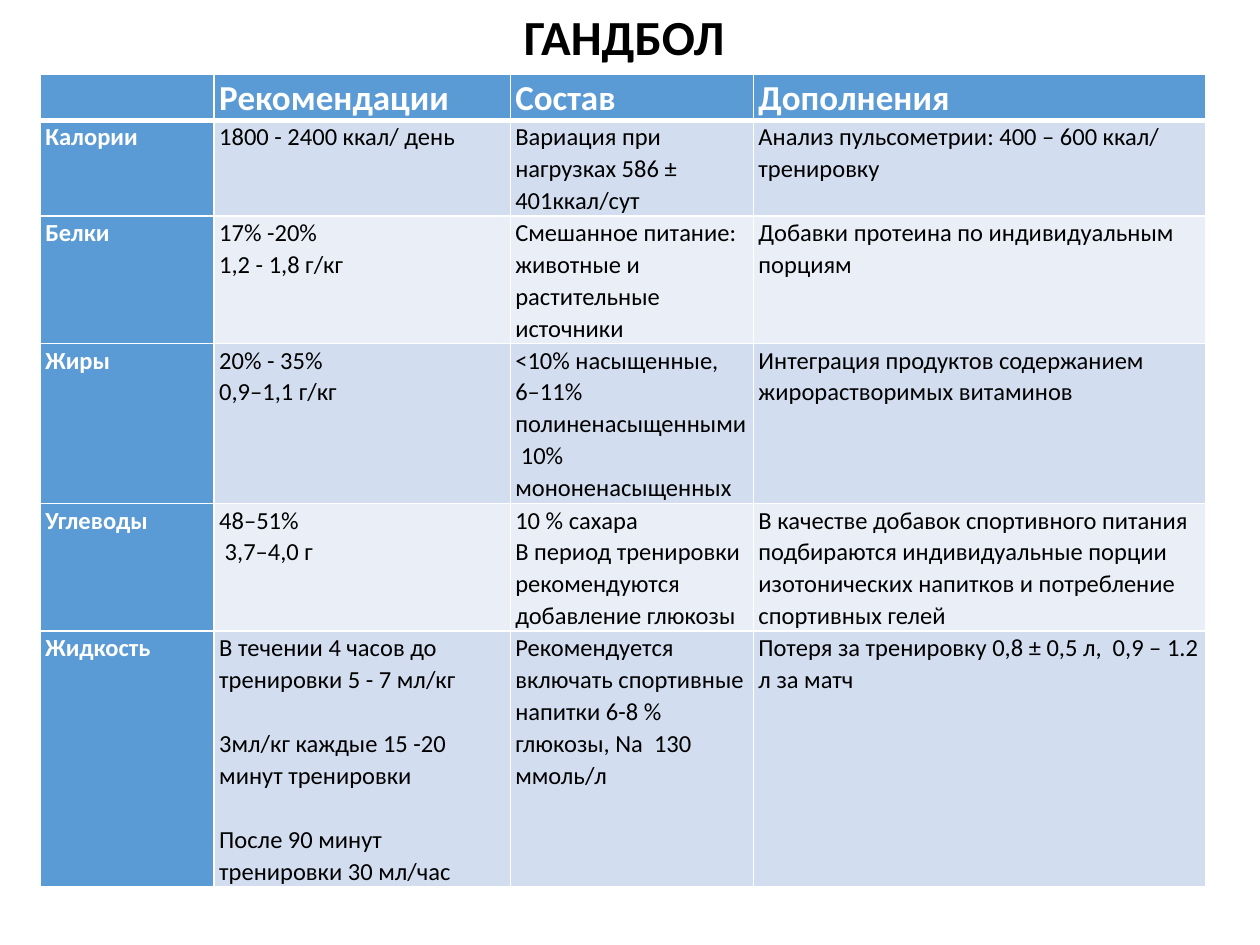
from dataclasses import dataclass

from lxml import etree
from pptx import Presentation
from pptx import util as u
from pptx.dml.color import RGBColor
from pptx.enum import text
from pptx.oxml import ns

COLORS = {"head": "5B9BD5", "odd": "D2DEEF", "even": "EAEFF7",
          "white": "FFFFFF", "black": "000000"}
FONT = "Calibri"
LINE_SPACING = 1.07
PARAGRAPH_GAP = 18.3  # one line of body text, in points
COLUMN_WIDTHS = (1.38, 2.35, 1.93, 3.59)


@dataclass(frozen=True)
class Row:
    """One table row: each cell is a list of paragraphs; gap spaces out the second cell."""
    height: float
    cells: tuple[list[str], ...]
    gap: float = 0


ROWS = (
    Row(0.36, ([], ["Рекомендации"], ["Состав"], ["Дополнения"])),
    Row(0.76, (["Калории"],
               ["1800 - 2400 ккал/ день"],
               ["Вариация при нагрузках 586 ± 401ккал/сут"],
               ["Анализ пульсометрии: 400 – 600 ккал/ тренировку"])),
    Row(1.01, (["Белки"],
               ["17% -20%", "1,2 - 1,8 г/кг"],
               ["Смешанное питание: животные и растительные источники"],
               ["Добавки протеина по индивидуальным порциям"])),
    Row(1.27, (["Жиры"],
               ["20% - 35%", "0,9–1,1 г/кг"],
               ["<10% насыщенные, 6–11% полиненасыщенными", " 10% мононенасыщенных"],
               ["Интеграция продуктов содержанием жирорастворимых витаминов"])),
    Row(1.01, (["Углеводы"],
               ["48–51%", " 3,7–4,0 г"],
               ["10 % сахара", "В период тренировки рекомендуются добавление глюкозы"],
               ["В качестве добавок спортивного питания подбираются индивидуальные "
                "порции изотонических напитков и потребление спортивных гелей"])),
    Row(2.02, (["Жидкость"],
               ["В течении 4 часов до тренировки 5 - 7 мл/кг",
                "3мл/кг каждые 15 -20 минут тренировки",
                "После 90 минут тренировки 30 мл/час"],
               ["Рекомендуется включать спортивные напитки 6-8 % глюкозы, Na  130 ммоль/л"],
               ["Потеря за тренировку 0,8 ± 0,5 л,  0,9 – 1.2 л за матч"]),
        gap=PARAGRAPH_GAP),
)


def add_run(p, words: str, size: float, color: str, bold: bool) -> None:
    r = p.add_run()
    r.text = words
    for name, value in {"name": FONT, "size": u.Pt(size), "bold": bold}.items():
        setattr(r.font, name, value)
    r.font.color.rgb = RGBColor.from_string(COLORS[color])


def set_borders(cell, widths: dict[str, float]) -> None:
    tc_pr = cell._tc.get_or_add_tcPr()
    for side, width in widths.items():
        ln = etree.SubElement(tc_pr, ns.qn(f"a:ln{side}"), w=str(u.Pt(width)))
        fill = etree.SubElement(ln, ns.qn("a:solidFill"))
        etree.SubElement(fill, ns.qn("a:srgbClr"), val=COLORS["white"])


def fill_cell(cell, paragraphs: list[str], i: int, j: int, gap: float) -> None:
    is_head = i == 0 or j == 0
    margins = {"margin_left": 0.04, "margin_right": 0.04, "margin_top": 0, "margin_bottom": 0}
    for name, value in margins.items():
        setattr(cell, name, u.Inches(value))
    set_borders(cell, {"L": 1, "R": 1, "T": 3 if i == 1 else 1, "B": 3 if i == 0 else 1})
    cell.fill.solid()
    shade = "head" if is_head else "odd" if i % 2 else "even"
    cell.fill.fore_color.rgb = RGBColor.from_string(COLORS[shade])

    tf = cell.text_frame
    for n, words in enumerate(paragraphs):
        p = tf.add_paragraph() if n else tf.paragraphs[0]
        p.line_spacing = LINE_SPACING
        if n and gap:
            p.space_before = u.Pt(gap)
        add_run(p, words, 20 if i == 0 else 14, "white" if is_head else "black", is_head)


def add_nutrition_table(s) -> None:
    width, height = sum(COLUMN_WIDTHS), sum(row.height for row in ROWS)
    table = s.shapes.add_table(len(ROWS), len(COLUMN_WIDTHS), u.Inches(0.32), u.Inches(0.59),
                               u.Inches(width), u.Inches(height)).table
    table.horz_banding = False
    for column, w in zip(table.columns, COLUMN_WIDTHS):
        column.width = u.Inches(w)
    for i, row in enumerate(ROWS):
        table.rows[i].height = u.Inches(row.height)
        for j, paragraphs in enumerate(row.cells):
            fill_cell(table.cell(i, j), paragraphs, i, j, row.gap if j == 1 else 0)


def add_title(s, words: str) -> None:
    sp = s.shapes.add_textbox(u.Inches(4.06), 0, u.Inches(1.81), u.Inches(0.57))
    tf = sp.text_frame
    tf.word_wrap = False
    tf.auto_size = text.MSO_AUTO_SIZE.SHAPE_TO_FIT_TEXT
    add_run(tf.paragraphs[0], words, 28, "black", True)


def main() -> None:
    prs = Presentation()
    prs.slide_width, prs.slide_height = u.Inches(10), u.Inches(7.5)
    s = prs.slides.add_slide(prs.slide_layouts[6])
    add_nutrition_table(s)
    add_title(s, "ГАНДБОЛ")
    prs.save("out.pptx")


if __name__ == "__main__":
    main()
